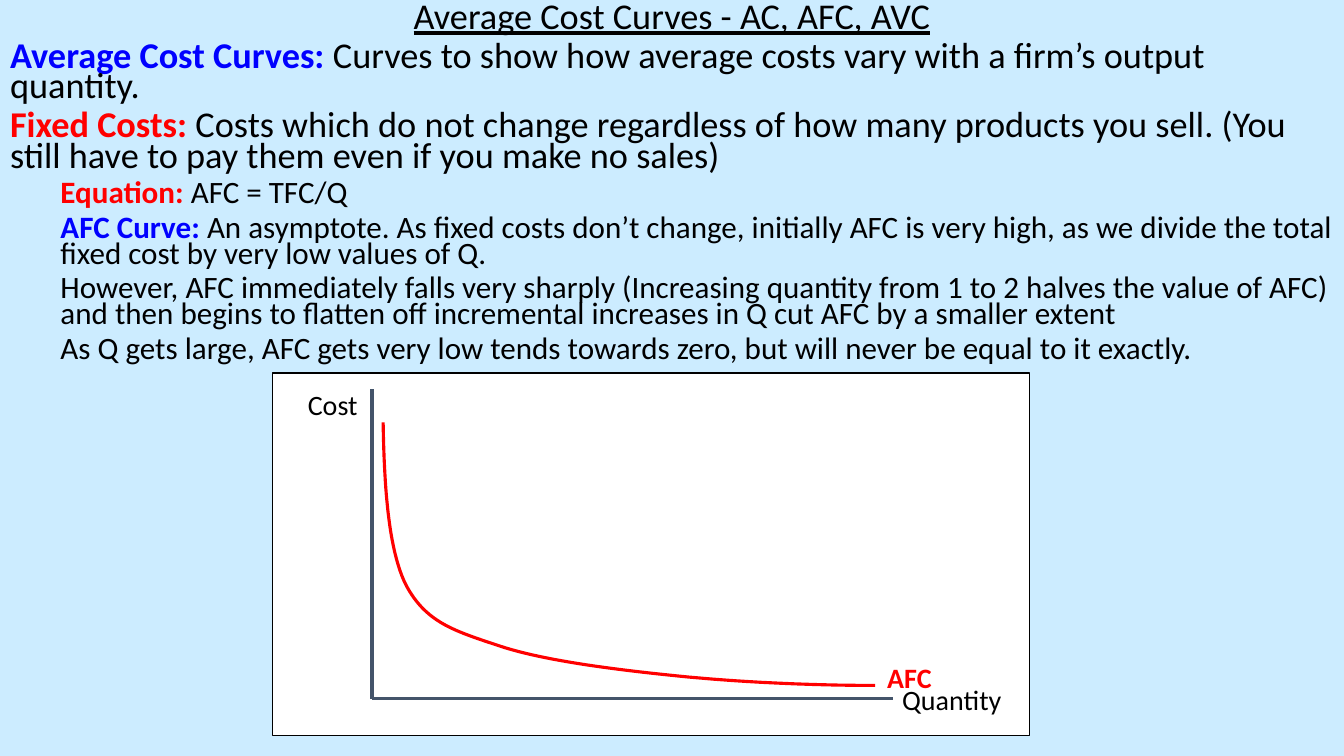
from lxml import etree
from pptx import Presentation
from pptx.dml.color import RGBColor
from pptx.enum.shapes import MSO_CONNECTOR, MSO_SHAPE
from pptx.enum.text import MSO_ANCHOR, MSO_AUTO_SIZE, PP_ALIGN
from pptx.oxml.ns import qn
from pptx.util import Inches, Pt

CENTER, LEFT = PP_ALIGN.CENTER, PP_ALIGN.LEFT
STRAIGHT, RECT = MSO_CONNECTOR.STRAIGHT, MSO_SHAPE.RECTANGLE
FONT, BLACK, BLUE, RED, SLATE = "Calibri", "000000", "0000FF", "FF0000", "44546A"
STEPS = 24  # straight pieces per curve section


def rgb(value):
    return RGBColor.from_string(value)


def style(r, size, color, bold=False):
    r.font.name, r.font.size, r.font.bold = FONT, Pt(size), bold
    r.font.color.rgb = rgb(color)


prs = Presentation()
prs.slide_width, prs.slide_height = Inches(13.33), Inches(7.5)
s = prs.slides.add_slide(prs.slide_layouts[1])
s.background.fill.solid()
s.background.fill.fore_color.rgb = rgb("CCECFF")
title = s.shapes.title.element
title.getparent().remove(title)

# Notes on the curves: level, lead-in, lead-in colour, text
notes = [
    (0, "", BLACK, "Average Cost Curves - AC, AFC, AVC"),
    (0, "Average Cost Curves: ", BLUE,
     "Curves to show how average costs vary with a firm’s output quantity."),
    (0, "Fixed Costs: ", RED,
     "Costs which do not change regardless of how many products you sell. "
     "(You still have to pay them even if you make no sales)"),
    (1, "Equation: ", RED, "AFC = TFC/Q"),
    (1, "AFC Curve: ", BLUE,
     "An asymptote. As fixed costs don’t change, initially AFC is very high, "
     "as we divide the total fixed cost by very low values of Q."),
    (1, "", BLACK,
     "However, AFC immediately falls very sharply (Increasing quantity from 1 to 2 "
     "halves the value of AFC) and then begins to flatten off incremental increases "
     "in Q cut AFC by a smaller extent"),
    (1, "", BLACK,
     "As Q gets large, AFC gets very low tends towards zero, "
     "but will never be equal to it exactly."),
]
body = s.placeholders[1]
body.left, body.top, body.width, body.height = 0, 0, prs.slide_width, Inches(3.91)
tf = body.text_frame
tf.auto_size, tf.vertical_anchor = MSO_AUTO_SIZE.NONE, MSO_ANCHOR.TOP
for i, (level, lead, color, text) in enumerate(notes):
    p = tf.add_paragraph() if i else tf.paragraphs[0]
    p.level, p.line_spacing = level, 0.7
    p.space_before = Pt(6 if i else 10)
    p.alignment = LEFT if i else CENTER
    pPr = p._p.get_or_add_pPr()
    pPr.set("marL", str(Inches(0.5) * level))
    pPr.set("indent", "0")
    etree.SubElement(pPr, qn("a:buNone"))
    for words, hue, bold in ((lead, color, True), (text, BLACK, False)):
        if words:
            r = p.add_run()
            r.text = words
            style(r, 22.2 if level else 25.9, hue, bold)
            if i == 0:
                r.font.underline = True

# Diagram
diagram = s.shapes.add_group_shape().shapes
panel = diagram.add_shape(RECT, Inches(2.7), Inches(3.7), Inches(7.51), Inches(3.6))
panel.shadow.inherit = False
panel.fill.solid()
panel.fill.fore_color.rgb = rgb("FFFFFF")
panel.line.color.rgb = rgb(BLACK)
panel.line.width = Pt(1)

origin_x, origin_y = Inches(3.69), Inches(6.93)
for start, end in (((origin_x, Inches(3.86)), (origin_x, origin_y)),
                   ((origin_x, origin_y), (Inches(8.86), origin_y))):
    axis = diagram.add_connector(STRAIGHT, *start, *end)
    axis.line.color.rgb = rgb(SLATE)
    axis.line.width = Pt(2.25)
    etree.SubElement(axis._element.spPr, qn("a:effectLst"))

# AFC curve: cubic sections, each starting where the last one ends
knots = [(3.8, 4.19), (3.81, 4.74), (3.84, 5.44), (4.03, 5.81), (4.23, 6.18),
         (4.51, 6.26), (4.96, 6.41), (5.41, 6.56), (6.16, 6.65), (6.76, 6.71),
         (7.37, 6.77), (8.07, 6.8), (8.68, 6.8)]
points = []
for k in range(0, len(knots) - 1, 3):
    for step in range(1, STEPS + 1):
        t = step / STEPS
        weights = ((1 - t) ** 3, 3 * t * (1 - t) ** 2, 3 * t ** 2 * (1 - t), t ** 3)
        points.append([Inches(sum(w * knot[axis_no] for w, knot in zip(weights, knots[k:k + 4])))
                       for axis_no in (0, 1)])
builder = diagram.build_freeform(Inches(knots[0][0]), Inches(knots[0][1]))
builder.add_line_segments(points, close=False)
curve = builder.convert_to_shape()
curve.shadow.inherit = False
curve.fill.background()
curve.line.color.rgb = rgb(RED)
curve.line.width = Pt(2.25)

for text, x, y, w, h, align, color in (
        ("Quantity", 8.44, 6.72, 2, 0.36, CENTER, BLACK),
        ("Cost", 2.55, 3.8, 1.5, 0.36, CENTER, BLACK),
        ("AFC", 8.7, 6.5, 2.08, 0.3, LEFT, RED)):
    tf = diagram.add_textbox(Inches(x), Inches(y), Inches(w), Inches(h)).text_frame
    tf.word_wrap = True
    tf.text = text
    p = tf.paragraphs[0]
    p.alignment = align
    style(p.runs[0], 20, color, bold=color == RED)

prs.save("out.pptx")
